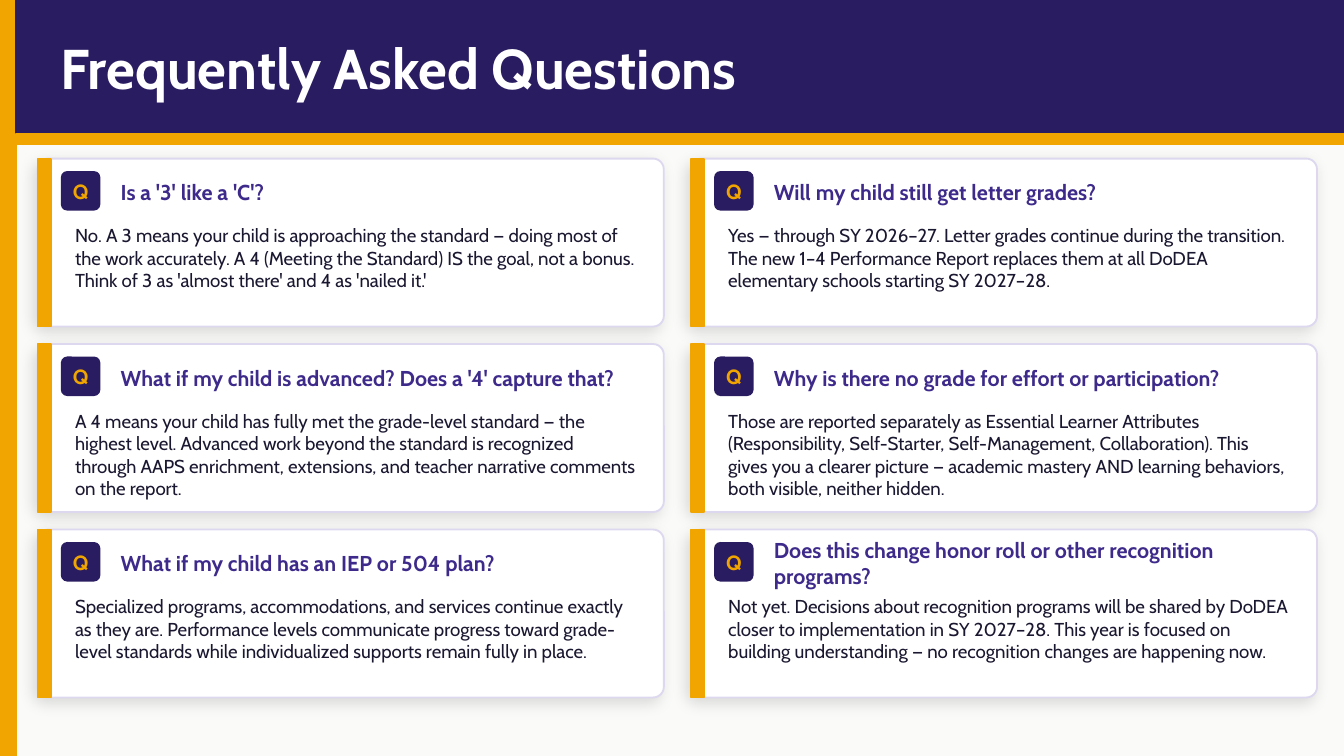
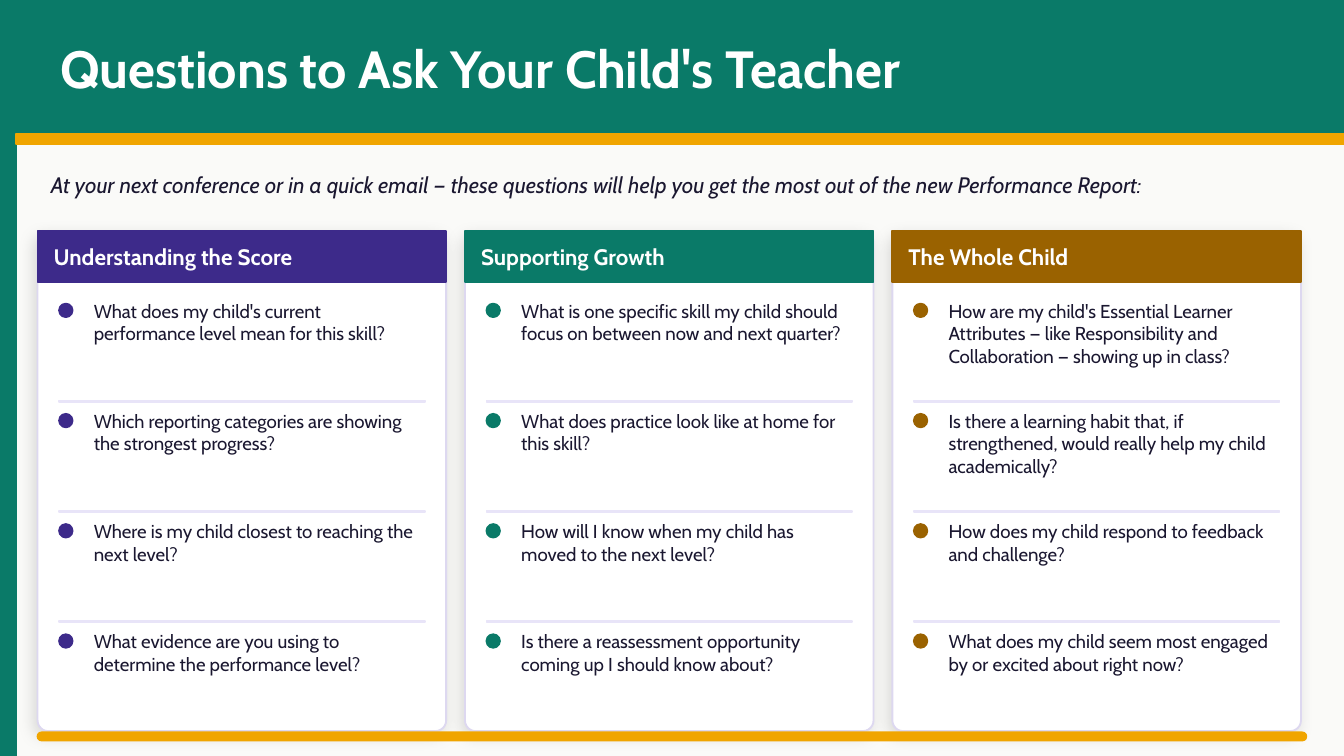
from lxml import etree
from pptx import Presentation
from pptx import util as u
from pptx.dml import color
from pptx.enum import shapes, text
from pptx.oxml import ns

Pt = u.Pt
KIND = shapes.MSO_SHAPE
W, H = 720, 405
SIDE_W = 8.64
BAND_H = 72
LEFT = 20.16

COLORS = {
    "paper": "FAFAF8", "white": "FFFFFF", "ink": "1A1730",
    "gold": "F0A500", "navy": "2A1C60", "purple": "3D2A8A",
    "green": "0A7A68", "brown": "9A6200",
    "border": "DDD8F0", "divider": "E8E4F8",
}

FAQS = [
    ("Is a '3' like a 'C'?",
     "No. A 3 means your child is approaching the standard — doing most of the work "
     "accurately. A 4 (Meeting the Standard) IS the goal, not a bonus. Think of 3 as "
     "'almost there' and 4 as 'nailed it.'"),
    ("Will my child still get letter grades?",
     "Yes — through SY 2026–27. Letter grades continue during the transition. The new "
     "1–4 Performance Report replaces them at all DoDEA elementary schools starting "
     "SY 2027–28."),
    ("What if my child is advanced? Does a '4' capture that?",
     "A 4 means your child has fully met the grade-level standard — the highest level. "
     "Advanced work beyond the standard is recognized through AAPS enrichment, "
     "extensions, and teacher narrative comments on the report."),
    ("Why is there no grade for effort or participation?",
     "Those are reported separately as Essential Learner Attributes (Responsibility, "
     "Self-Starter, Self-Management, Collaboration). This gives you a clearer picture — "
     "academic mastery AND learning behaviors, both visible, neither hidden."),
    ("What if my child has an IEP or 504 plan?",
     "Specialized programs, accommodations, and services continue exactly as they are. "
     "Performance levels communicate progress toward grade-level standards while "
     "individualized supports remain fully in place."),
    ("Does this change honor roll or other recognition programs?",
     "Not yet. Decisions about recognition programs will be shared by DoDEA closer to "
     "implementation in SY 2027–28. This year is focused on building understanding — no "
     "recognition changes are happening now."),
]

TOPICS = [
    ("Understanding the Score", "purple", [
        "What does my child's current performance level mean for this skill?",
        "Which reporting categories are showing the strongest progress?",
        "Where is my child closest to reaching the next level?",
        "What evidence are you using to determine the performance level?"]),
    ("Supporting Growth", "green", [
        "What is one specific skill my child should focus on between now and next quarter?",
        "What does practice look like at home for this skill?",
        "How will I know when my child has moved to the next level?",
        "Is there a reassessment opportunity coming up I should know about?"]),
    ("The Whole Child", "brown", [
        "How are my child's Essential Learner Attributes — like Responsibility and "
        "Collaboration — showing up in class?",
        "Is there a learning habit that, if strengthened, would really help my child "
        "academically?",
        "How does my child respond to feedback and challenge?",
        "What does my child seem most engaged by or excited about right now?"]),
]


def rgb(name):
    return color.RGBColor.from_string(COLORS[name])


class Deck:
    """Holds the presentation, its style and the current slide."""

    font = "Cabin"

    def __init__(self):
        self.prs = Presentation()
        self.prs.slide_width, self.prs.slide_height = Pt(W), Pt(H)
        self.s = None

    def slide(self, title, size, side, band):
        self.s = self.prs.slides.add_slide(self.prs.slide_layouts[6])
        fill = self.s.background.fill
        fill.solid()
        fill.fore_color.rgb = rgb("paper")
        self.shape(0, 0, SIDE_W, H, side)
        self.shape(SIDE_W, 0, W - SIDE_W, BAND_H, band)
        self.text(title, 25.2, 0, 669.6, BAND_H, size, "white", bold=True, middle=True)
        self.shape(SIDE_W, BAND_H, W - SIDE_W, 5.04, "gold")

    def shape(self, x, y, w, h, fill, line=None, kind=KIND.RECTANGLE, radius=None):
        sp = self.s.shapes.add_shape(kind, Pt(x), Pt(y), Pt(w), Pt(h))
        sp.shadow.inherit = False
        sp.fill.solid()
        sp.fill.fore_color.rgb = rgb(fill)
        sp.line.color.rgb = rgb(line or fill)
        sp.line.width = Pt(1)
        if radius is not None:
            sp.adjustments[0] = radius / min(w, h)
        return sp

    def rounded(self, x, y, w, h, fill, radius, line=None):
        return self.shape(x, y, w, h, fill, line, KIND.ROUNDED_RECTANGLE, radius)

    def card(self, x, y, w, h):
        """White rounded panel with a soft shadow."""
        sp = self.rounded(x, y, w, h, "white", 5.76, "border")
        effects = sp.element.spPr.find(ns.qn("a:effectLst"))
        shadow = etree.SubElement(
            effects, ns.qn("a:outerShdw"), blurRad=str(Pt(8)), dist=str(Pt(3)),
            dir=str(135 * 60000), algn="bl", rotWithShape="0")
        black = etree.SubElement(shadow, ns.qn("a:srgbClr"), val="000000")
        etree.SubElement(black, ns.qn("a:alpha"), val="12000")

    def text(self, words, x, y, w, h, size, ink="ink", bold=False, italic=False,
             middle=False, center=False, inset=True):
        tf = self.s.shapes.add_textbox(Pt(x), Pt(y), Pt(w), Pt(h)).text_frame
        tf.word_wrap = True
        if middle:
            tf.vertical_anchor = text.MSO_ANCHOR.MIDDLE
        if not inset:
            tf.margin_left = tf.margin_right = tf.margin_top = tf.margin_bottom = 0
        tf.text = words
        p = tf.paragraphs[0]
        if center:
            p.alignment = text.PP_ALIGN.CENTER
        f = p.runs[0].font
        f.name, f.size, f.bold, f.italic = self.font, Pt(size), bold, italic
        f.color.rgb = rgb(ink)

    def faq(self, x, y, question, answer):
        self.card(x, y, 335.52, 90)
        self.shape(x, y, 7.2, 90, "gold")
        badge = (x + 12.96, y + 7.2, 20.16, 20.16)
        self.rounded(*badge, "navy", 2.88)
        self.text("Q", *badge, 11, "gold", bold=True, middle=True, center=True, inset=False)
        self.text(question, x + 37.44, y + 7.2, 290.88, 21.6, 11.5, "purple",
                  bold=True, middle=True)
        self.text(answer, x + 12.96, y + 31.68, 315.36, 54.72, 10)

    def topic(self, x, y, heading, tint, questions):
        self.card(x, y, 218.88, 267.84)
        self.shape(x, y, 218.88, 27.36, tint)
        self.text(heading, x + 8.64, y, 204.48, 27.36, 12, "white",
                  bold=True, middle=True, inset=False)
        for i, question in enumerate(questions):
            top = y + 33.12 + i * 59.04
            if i:
                self.shape(x + 11.52, top - 1.44, 195.84, 0.72, "divider")
            self.shape(x + 11.52, top + 5.76, 7.2, 7.2, tint, kind=KIND.OVAL)
            self.text(question, x + 23.04, top, 187.2, 56.16, 10)


def main():
    deck = Deck()

    deck.slide("Frequently Asked Questions", 30, "gold", "navy")
    for i, (question, answer) in enumerate(FAQS):
        row, col = divmod(i, 2)
        deck.faq(LEFT + col * 349.92, 84.96 + row * 99.36, question, answer)

    deck.slide("Questions to Ask Your Child's Teacher", 28, "green", "green")
    deck.text("At your next conference or in a quick email — these questions will help you "
              "get the most out of the new Performance Report:",
              LEFT, 83.52, 679.68, 30.24, 12, italic=True, middle=True)
    for i, topic in enumerate(TOPICS):
        deck.topic(LEFT + i * 228.96, 123.84, *topic)
    deck.rounded(LEFT, 392.4, 679.68, 4.32, "gold", 2.16)

    deck.prs.save("out.pptx")


if __name__ == "__main__":
    main()
